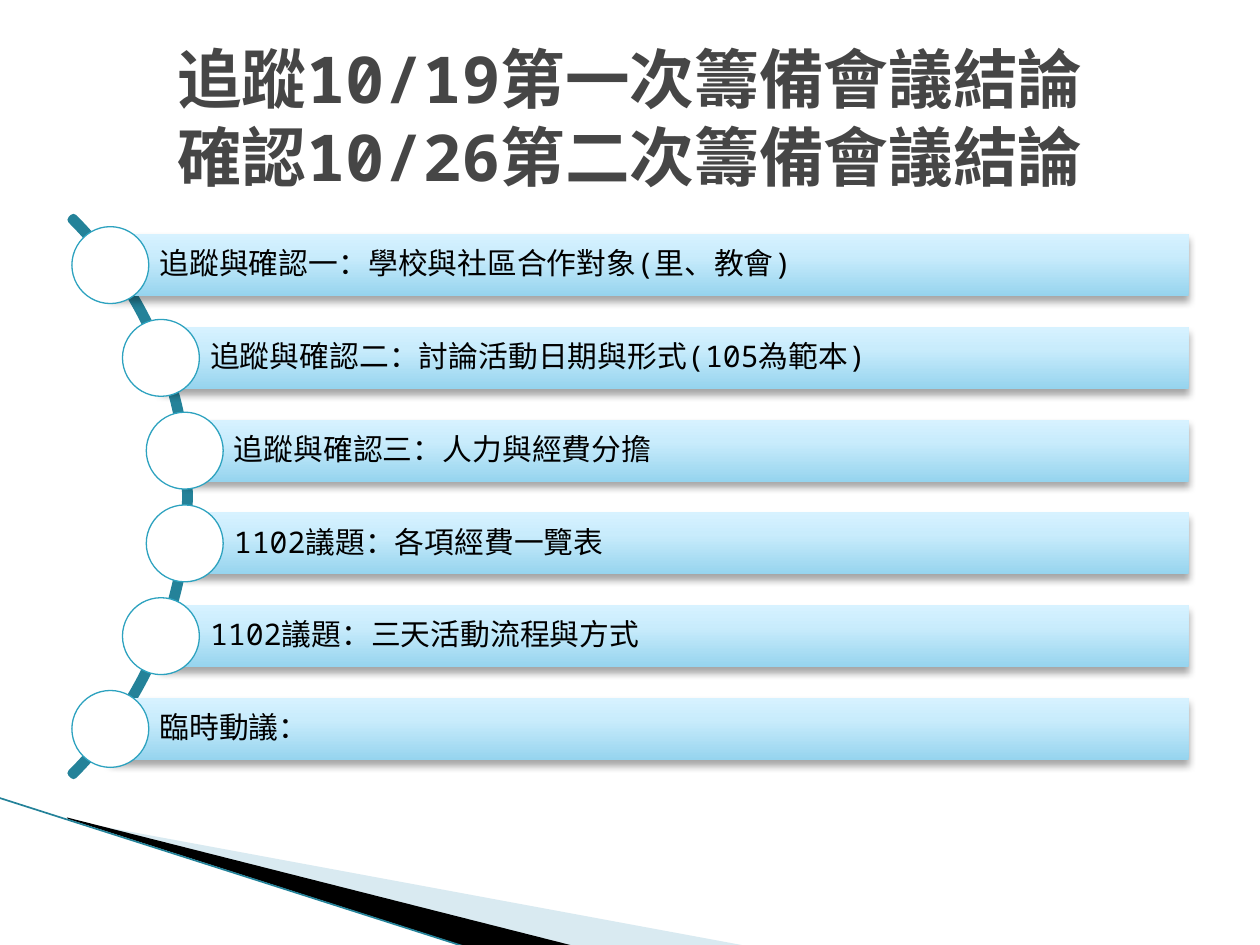
from copy import deepcopy
from lxml.etree import SubElement as Sub
from pptx import Presentation
from pptx.dml.color import RGBColor
from pptx.enum.shapes import MSO_CONNECTOR as Link, MSO_SHAPE as Kind
from pptx.enum.text import MSO_ANCHOR as Anchor, PP_ALIGN as Align
from pptx.oxml.ns import qn
from pptx.util import Cm, Pt

MONO, SANS = "Noto Sans Mono", "Noto Sans CJK TC"
TEAL = "248299"
STOPS = [(0, "96D4EE"), (0.65, "C9ECFC"), (1, "D7F2FF")]
ITEMS = [
    (1.45, ["追蹤與確認一", "：", "學校與社區合作對象(里、教會)"]),
    (2.47, ["追蹤與確認二", "：", "討論活動日期與形式(105為範本)"]),
    (2.95, ["追蹤與確認三", "：", "人力與經費分擔"]),
    (2.95, ["1102議題：各項經費一覽表"]),
    (2.47, ["1102議題：三天活動流程與方式"]),
    (1.45, ["臨時動議："]),
]
TOP, PITCH, RIGHT = 4.72, 1.87, 23.96
HIGH, DISC = 1.25, 1.55


def hue(code):
    return RGBColor.from_string(code)


def add_run(para, text, size, color, face=MONO, bold=False):
    run = para.add_run()
    run.text = text
    font = run.font
    font.name, font.size, font.bold = face, Pt(size), bold
    font.color.rgb = hue(color)
    Sub(run._r.get_or_add_rPr(), qn("a:ea"), typeface=SANS)


def add_form(slide, kind, x, y, w, h, fill=None, line=None, width=0.75):
    form = slide.shapes.add_shape(kind, Cm(x), Cm(y), Cm(w), Cm(h))
    form.shadow.inherit = False
    if fill:
        form.fill.solid()
        form.fill.fore_color.rgb = hue(fill)
    else:
        form.fill.background()
    if line:
        form.line.color.rgb = hue(line)
        form.line.width = Pt(width)
    else:
        form.line.fill.background()
    return form


def add_wedge(slide, points, fill, alpha=100):
    start, *rest = [(Cm(x), Cm(y)) for x, y in points]
    pen = slide.shapes.build_freeform(*start)
    pen.add_line_segments(rest)
    form = pen.convert_to_shape()
    form.shadow.inherit = False
    form.line.fill.background()
    form.fill.solid()
    form.fill.fore_color.rgb = hue(fill)
    if alpha < 100:
        tint = form._element.spPr.find(qn("a:solidFill"))[0]
        Sub(tint, qn("a:alpha"), val=str(alpha * 1000))


def add_edge(slide, x1, y1, x2, y2, color, width):
    edge = slide.shapes.add_connector(Link.STRAIGHT, Cm(x1), Cm(y1), Cm(x2), Cm(y2))
    edge.line.color.rgb = hue(color)
    edge.line.width = Pt(width)
    Sub(edge._element.spPr, qn("a:effectLst"))


def add_arc(slide):
    arc = add_form(slide, Kind.BLOCK_ARC, -12.09, 2.06, 15.9, 15.9, None, TEAL, 4.33)
    for i, val in enumerate((189, 27, 0.004)):
        arc.adjustments[i] = val
    arc._element.spPr.find(qn("a:ln")).set("cap", "rnd")


def shade(bar):
    bar.fill.gradient()
    bar.fill.gradient_angle = 90
    group = bar._element.spPr.find(qn("a:gradFill")).find(qn("a:gsLst"))
    group.append(deepcopy(group[-1]))
    for stop, (place, color) in zip(bar.fill.gradient_stops, STOPS):
        stop.position = place
        stop.color.rgb = hue(color)


def cast(bar):
    group = bar._element.spPr.find(qn("a:effectLst"))
    drop = Sub(group, qn("a:outerShdw"), blurRad=str(Pt(4)), dist=str(Pt(3)),
               dir="5400000", rotWithShape="0")
    tint = Sub(drop, qn("a:srgbClr"), val="000000")
    Sub(tint, qn("a:alpha"), val="35000")


def add_item(slide, left, top, parts):
    x = left + DISC / 2
    bar = add_form(slide, Kind.RECTANGLE, x, top, RIGHT - x, HIGH)
    shade(bar)
    cast(bar)
    frame = bar.text_frame
    frame.word_wrap = True
    frame.vertical_anchor = Anchor.MIDDLE
    frame.margin_left = Cm(0.99)
    frame.margin_right = frame.margin_top = frame.margin_bottom = Cm(0.12)
    para = frame.paragraphs[0]
    para.alignment = Align.LEFT
    para.line_spacing = 0.9
    para.space_after = Pt(6)
    for part in parts:
        add_run(para, part, 17, "000000", SANS if part == "：" else MONO)
    add_form(slide, Kind.OVAL, left, top + (HIGH - DISC) / 2, DISC, DISC, "FFFFFF", "2DA2BF")


def add_title(slide, lines):
    box = slide.shapes.add_textbox(Cm(1.27), Cm(0.76), Cm(22.86), Cm(3.18))
    frame = box.text_frame
    frame.word_wrap = True
    frame.vertical_anchor = Anchor.MIDDLE
    para = frame.paragraphs[0]
    para.alignment = Align.CENTER
    for i, line in enumerate(lines):
        if i:
            para.add_line_break()
        add_run(para, line, 36.9, "464646", bold=True)


def main():
    deck = Presentation()
    deck.slide_width, deck.slide_height = Cm(25.4), Cm(19.05)
    slide = deck.slides.add_slide(deck.slide_layouts[6])
    add_wedge(slide, [(1.4, 16.54), (15.11, 19.08), (11.58, 19.08), (1.4, 16.51)], "A0CBDC", 40)
    add_wedge(slide, [(1.35, 16.48), (11.61, 19.08), (9.45, 19.1), (1.37, 16.51)], "000000")
    add_edge(slide, -0.03, 16.08, 9.42, 19.1, TEAL, 0.95)
    add_arc(slide)
    for i, (left, parts) in enumerate(ITEMS):
        add_item(slide, left, TOP + i * PITCH, parts)
    add_title(slide, ["追蹤10/19第一次籌備會議結論", "確認10/26第二次籌備會議結論"])
    deck.save("out.pptx")


if __name__ == "__main__":
    main()
